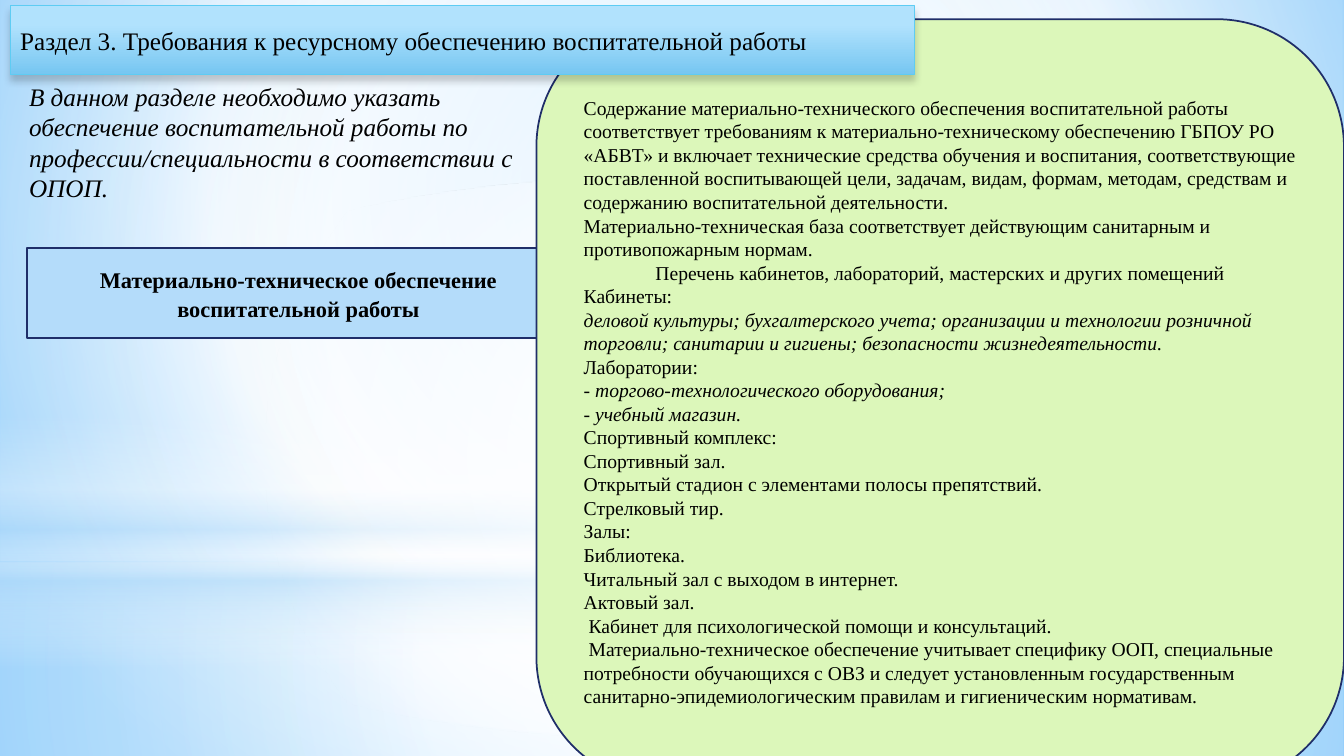
from lxml import etree
from pptx import Presentation
from pptx import util as u
from pptx.dml.color import RGBColor
from pptx.enum import shapes, text
from pptx.oxml import ns

TITLE = "Раздел 3. Требования к ресурсному обеспечению воспитательной работы"
INTRO = ("В данном разделе необходимо указать обеспечение воспитательной работы "
         "по профессии/специальности в соответствии с ОПОП.")
TOPIC = "Материально-техническое обеспечение воспитательной работы"

PLAIN, ITALIC, CENTRED = "plain", "italic", "centred"
DETAILS = [
    (PLAIN, "Содержание материально-технического обеспечения воспитательной работы "
            "соответствует требованиям к материально-техническому обеспечению ГБПОУ РО "
            "«АБВТ» и включает технические средства обучения и воспитания, "
            "соответствующие поставленной воспитывающей цели, задачам, видам, формам, "
            "методам, средствам и содержанию воспитательной деятельности."),
    (PLAIN, "Материально-техническая база соответствует действующим санитарным и "
            "противопожарным нормам."),
    (CENTRED, "Перечень кабинетов, лабораторий, мастерских и других помещений"),
    (PLAIN, "Кабинеты:"),
    (ITALIC, "деловой культуры; бухгалтерского учета; организации и технологии "
             "розничной торговли; санитарии и гигиены; безопасности жизнедеятельности."),
    (PLAIN, "Лаборатории:"),
    (ITALIC, "- торгово-технологического оборудования;"),
    (ITALIC, "- учебный магазин."),
    (PLAIN, "Спортивный комплекс:"),
    (PLAIN, "Спортивный зал."),
    (PLAIN, "Открытый стадион с элементами полосы препятствий."),
    (PLAIN, "Стрелковый тир."),
    (PLAIN, "Залы:"),
    (PLAIN, "Библиотека."),
    (PLAIN, "Читальный зал с выходом в интернет."),
    (PLAIN, "Актовый зал."),
    (PLAIN, " Кабинет для психологической помощи и консультаций."),
    (PLAIN, " Материально-техническое обеспечение учитывает специфику ООП, "
            "специальные потребности обучающихся с ОВЗ и следует установленным "
            "государственным санитарно-эпидемиологическим правилам и гигиеническим "
            "нормативам."),
]

FONT, INK, NAVY, SKY, WHITE = "Times New Roman", "000000", "1F2E69", "B4DCFA", "FFFFFF"
WIDTH, HEIGHT = 13.33, 7.5
RECT, OVAL = shapes.MSO_SHAPE.RECTANGLE, shapes.MSO_SHAPE.OVAL
LEFT, CENTER = text.PP_ALIGN.LEFT, text.PP_ALIGN.CENTER

# Gradient stops: position %, colour, opacity %
DOWN = '<a:lin ang="5400000" scaled="0"/>'
BACKDROP = [(0, "9ED5FF", 100), (60, WHITE, 100), (100, "5BB9FF", 100)]
TITLE_STOPS = [(28, "B1E2FD", 100), (100, "76C6F1", 100)]


def radial(left, top, right, bottom):
    return (f'<a:path path="circle"><a:fillToRect l="{left}000" t="{top}000" '
            f'r="{right}000" b="{bottom}000"/></a:path>')


MIDDLE = radial(50, 50, 50, 50)
# Full-width glows: shape, top, height, stops, direction
GLOWS = [
    (RECT, 5.58, 1.92, [(0, WHITE, 91), (37, WHITE, 76), (100, SKY, 79)], MIDDLE),
    (RECT, 0, 5.58, [(0, WHITE, 89), (48, WHITE, 62), (100, SKY, 79)], MIDDLE),
    (RECT, 4.12, 2.5, [(0, WHITE, 0), (29, WHITE, 30), (45, SKY, 40), (55, WHITE, 26),
                       (65, SKY, 60), (100, WHITE, 0)], DOWN),
    (OVAL, 1.75, 5.58, [(0, WHITE, 100), (56, WHITE, 0)], MIDDLE),
]


def rgb(value):
    return RGBColor.from_string(value)


def drawing_xml(body):
    return etree.fromstring(body.replace(">", f' xmlns:a="{ns.nsuri("a")}">', 1))


def set_gradient(fill, properties, stops, direction):
    """Swap the solid fill inside the properties element for a gradient."""
    fill.solid()
    fill.fore_color.rgb = rgb(WHITE)
    marks = "".join(f'<a:gs pos="{at}000"><a:srgbClr val="{colour}">'
                    f'<a:alpha val="{alpha}000"/></a:srgbClr></a:gs>'
                    for at, colour, alpha in stops)
    gradient = drawing_xml(f'<a:gradFill rotWithShape="1"><a:gsLst>{marks}</a:gsLst>'
                           f'{direction}</a:gradFill>')
    properties.replace(properties.find(ns.qn("a:solidFill")), gradient)


def outline(shape, colour, points):
    shape.line.color.rgb = rgb(colour)
    shape.line.width = u.Pt(points)


def add_panel(slide, kind, box, fill):
    panel = slide.shapes.add_shape(kind, *map(u.Inches, box))
    panel.shadow.inherit = False
    panel.fill.solid()
    panel.fill.fore_color.rgb = rgb(fill)
    outline(panel, NAVY, 1.25)
    return panel


def write(shape, lines, size, align=LEFT, bold=False, spacing=1.0,
          anchor=text.MSO_ANCHOR.MIDDLE):
    frame = shape.text_frame
    frame.word_wrap = True
    frame.vertical_anchor = anchor
    frame.text = "\n".join(line for _, line in lines)
    for paragraph, (style, _) in zip(frame.paragraphs, lines):
        paragraph.alignment = CENTER if style == CENTRED else align
        paragraph.line_spacing = spacing
        font = paragraph.font
        font.name, font.size, font.bold = FONT, u.Pt(size), bold
        font.italic = style == ITALIC
        font.color.rgb = rgb(INK)


def main():
    deck = Presentation()
    deck.slide_width, deck.slide_height = u.Inches(WIDTH), u.Inches(HEIGHT)
    slide = deck.slides.add_slide(deck.slide_layouts[5])

    backdrop = slide.background.fill
    set_gradient(backdrop, slide.element.find(".//" + ns.qn("p:bgPr")),
                 BACKDROP, radial(20, 10, 20, 60))
    for kind, top, height, stops, direction in GLOWS:
        glow = slide.shapes.add_shape(kind, 0, *map(u.Inches, (top, WIDTH, height)))
        glow.shadow.inherit = False
        glow.line.fill.background()
        set_gradient(glow.fill, glow.element.spPr, stops, direction)

    topic = add_panel(slide, RECT, (0.27, 2.46, 5.38, 0.89), SKY)
    write(topic, [(PLAIN, TOPIC)], 16, CENTER, bold=True, spacing=1.07)

    details = add_panel(slide, shapes.MSO_SHAPE.ROUNDED_RECTANGLE,
                        (5.32, 0.19, 8.01, 7.59), "DCF7BA")
    write(details, DETAILS, 14)

    title = slide.shapes.title
    title.left, title.top, title.width, title.height = map(
        u.Inches, (0.1, 0.05, 8.97, 0.69))
    write(title, [(PLAIN, TITLE)], 18, spacing=1.07)
    title.text_frame.auto_size = text.MSO_AUTO_SIZE.NONE
    hanging = u.Inches(0.69)
    indent = title.text_frame.paragraphs[0]._p.get_or_add_pPr()
    indent.set("marL", str(hanging))
    indent.set("indent", str(-hanging))
    set_gradient(title.fill, title.element.spPr, TITLE_STOPS, DOWN)
    outline(title, "5ECCF3", 0.75)
    title.shadow.inherit = False
    title.element.spPr.find(ns.qn("a:effectLst")).append(drawing_xml(
        f'<a:outerShdw blurRad="{u.Pt(5)}" dist="{u.Pt(4)}" dir="5400000" '
        f'rotWithShape="0"><a:srgbClr val="{INK}"><a:alpha val="20000"/>'
        '</a:srgbClr></a:outerShdw>'))
    details.element.addnext(title.element)  # the title overlaps the details panel

    intro = slide.shapes.add_textbox(*map(u.Inches, (0.19, 0.76, 5.46, 1.31)))
    write(intro, [(ITALIC, INTRO)], 18, anchor=text.MSO_ANCHOR.TOP)
    intro.text_frame.auto_size = text.MSO_AUTO_SIZE.SHAPE_TO_FIT_TEXT

    deck.save("out.pptx")


if __name__ == "__main__":
    main()
